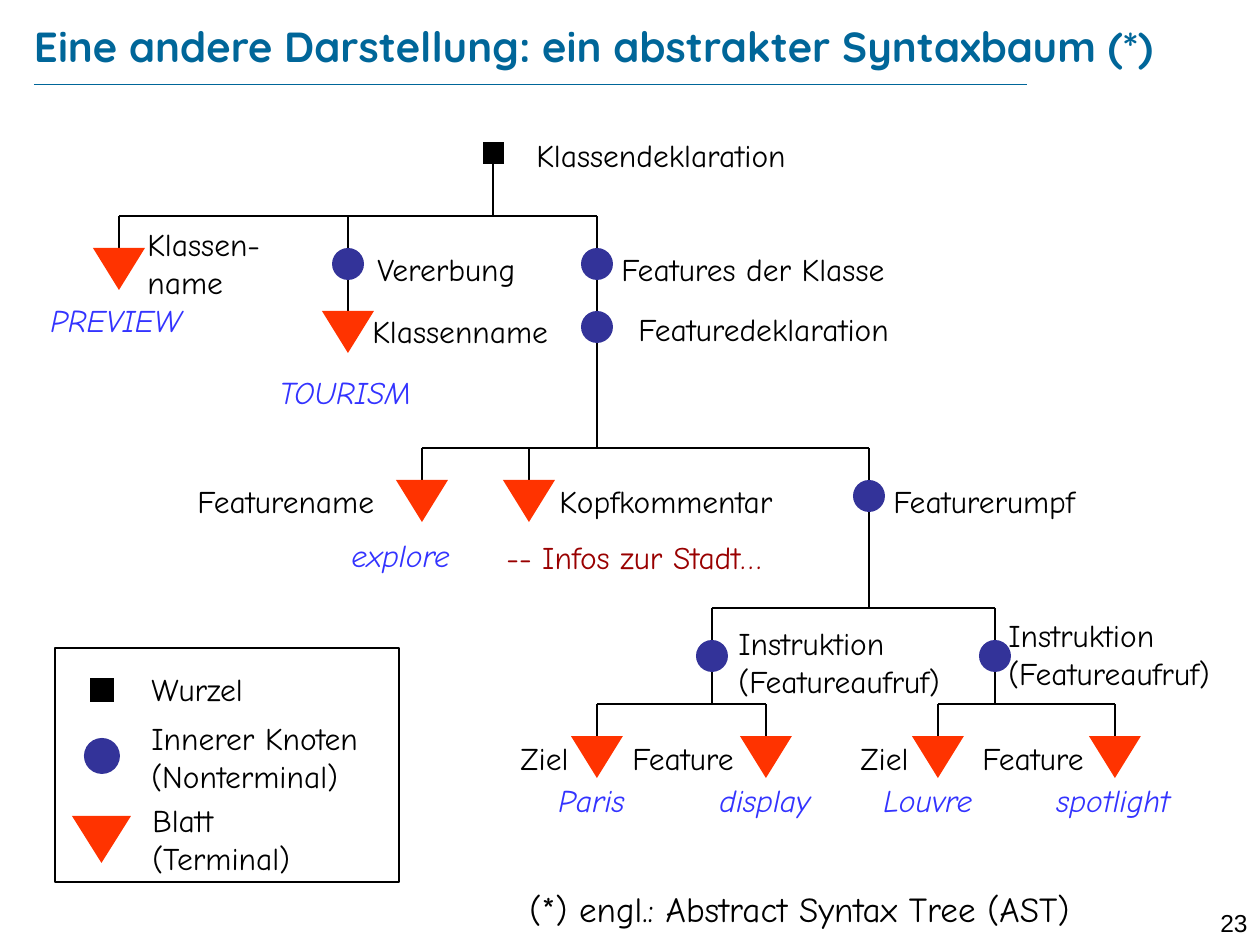
from pptx import Presentation
from pptx.dml.color import RGBColor
from pptx.enum.shapes import MSO_CONNECTOR as Link, MSO_SHAPE as Form
from pptx.enum.text import MSO_ANCHOR as Anchor, PP_ALIGN as Align
from pptx.oxml.ns import qn
from pptx.util import Pt
from lxml.etree import SubElement

PX = 914400 // 126
BLACK, BLUE, RED, TEAL = "000000", "3333FF", "990000", "006699"
GAP = 32

TITLE = "Eine andere Darstellung: ein abstrakter Syntaxbaum (*)"
KINDS = {
    "root": (Form.FLOWCHART_PROCESS, 21, 22, BLACK),
    "inner": (Form.FLOWCHART_CONNECTOR, 32, 32, "333399"),
    "leaf": (Form.FLOWCHART_MERGE, 52, 42, "FF3300"),
}
NODES = {
    "class": ("root", 493, 142),
    "name": ("leaf", 119, 248),
    "inherit": ("inner", 348, 248),
    "parent": ("leaf", 348, 311),
    "features": ("inner", 597, 248),
    "feature": ("inner", 597, 311),
    "explore": ("leaf", 422, 480),
    "comment": ("leaf", 529, 480),
    "body": ("inner", 869, 480),
    "call 1": ("inner", 712, 640),
    "call 2": ("inner", 995, 640),
    "Paris": ("leaf", 597, 736),
    "display": ("leaf", 766, 736),
    "Louvre": ("leaf", 938, 736),
    "spotlight": ("leaf", 1115, 736),
}
TREE = {
    "class": ["name", "inherit", "features"],
    "inherit": ["parent"],
    "features": ["feature"],
    "feature": ["explore", "comment", "body"],
    "body": ["call 1", "call 2"],
    "call 1": ["Paris", "display"],
    "call 2": ["Louvre", "spotlight"],
}
LABELS = [
    ("Klassendeklaration", 524, 130, 302),
    ("Klassen-name", 135, 219, 185),
    ("Vererbung", 365, 244, 190),
    ("Features der Klasse", 609, 244, 320),
    ("Klassenname", 360, 306, 217),
    ("Featuredeklaration", 626, 304, 310),
    ("Featurename", 185, 476, 218),
    ("Kopfkommentar", 547, 476, 280),
    ("Featurerumpf", 881, 476, 232),
    ("Instruktion\n(Featureaufruf)", 726, 618, 272),
    ("Instruktion\n(Featureaufruf)", 996, 610, 263),
    ("Ziel", 508, 733, 90),
    ("Feature", 620, 733, 135),
    ("Ziel", 848, 733, 90),
    ("Feature", 970, 733, 135),
    ("Wurzel", 139, 664, 152),
    ("Innerer Knoten\n(Nonterminal)", 139, 713, 253),
    ("Blatt\n(Terminal)", 140, 795, 204),
]
VALUES = [
    ("PREVIEW", 38, 295, 172),
    ("TOURISM", 267, 367, 184),
    ("explore", 339, 530, 137),
    ("Paris", 546, 775, 110),
    ("display", 707, 775, 140),
    ("Louvre", 871, 775, 140),
    ("spotlight", 1044, 775, 170),
]
KEY = [("root", 90, 678, 24, 24), ("inner", 84, 738, 36, 36),
       ("leaf", 72, 816, 59, 47)]

deck = Presentation()
deck.slide_width, deck.slide_height = 1260 * PX, 945 * PX
slide = deck.slides.add_slide(deck.slide_layouts[5])
shapes = slide.shapes


def tint(code):
    return RGBColor.from_string(code)


def place(*box):
    return [n * PX for n in box]


def write(frame, text, size=18, font="Comic Neue", color=BLACK,
          bold=False, italic=False, align=Align.LEFT):
    frame.word_wrap = True
    frame.text = text
    for para in frame.paragraphs:
        para.alignment = align
        face = para.runs[0].font
        face.name, face.size, face.color.rgb = font, Pt(size), tint(color)
        face.bold, face.italic = bold, italic


def label(text, x, y, w, **style):
    high = 92 if "\n" in text or text == "Klassen-name" else 50
    write(shapes.add_textbox(*place(x, y, w, high)).text_frame, text, **style)


def line(x1, y1, x2, y2, color=BLACK, width=0.75):
    link = shapes.add_connector(Link.STRAIGHT, *place(x1, y1, x2, y2))
    link.line.color.rgb, link.line.width = tint(color), Pt(width)
    SubElement(link._element.spPr, qn("a:effectLst"))


def mark(kind, x, y, w, h):
    form, _, _, color = KINDS[kind]
    shape = shapes.add_shape(form, *place(x, y, w, h))
    shape.shadow.inherit = False
    shape.fill.solid()
    shape.fill.fore_color.rgb = tint(color)
    shape.line.fill.background()


head = shapes.title
head.left, head.top, head.width, head.height = place(34, 16, 1153, 60)
frame = head.text_frame
frame.margin_left = frame.margin_right = 0
frame.margin_top = frame.margin_bottom = 0
frame.vertical_anchor = Anchor.MIDDLE
write(frame, TITLE, size=24, font="Quicksand", color=TEAL, bold=True)
line(34, 84, 1027, 84, color=TEAL, width=0.25)

for name, kids in TREE.items():
    kind, x, top = NODES[name]
    low = top + KINDS[kind][2]
    spots = [NODES[kid][1:] for kid in kids]
    if len(kids) == 1:
        line(x, low, x, spots[0][1])
        continue
    bus = spots[0][1] - GAP
    line(x, low, x, bus)
    line(spots[0][0], bus, spots[-1][0], bus)
    for kx, ky in spots:
        line(kx, bus, kx, ky)

for kind, x, top in NODES.values():
    _, w, h, _ = KINDS[kind]
    mark(kind, x - w // 2, top, w, h)

frame = shapes.add_shape(Form.RECTANGLE, *place(55, 648, 344, 234))
frame.shadow.inherit = False
frame.fill.background()
frame.line.color.rgb, frame.line.width = tint(BLACK), Pt(0.75)
for item in KEY:
    mark(*item)

for item in LABELS:
    label(*item)
for item in VALUES:
    label(*item, color=BLUE, italic=True)
label("-- Infos zur Stadt…", 494, 532, 323, color=RED)
label("(*) engl.: Abstract Syntax Tree (AST)", 517, 881, 687, size=20)
label("23", 1190, 902, 70, size=14, font="Arial", align=Align.RIGHT)

deck.save("out.pptx")
